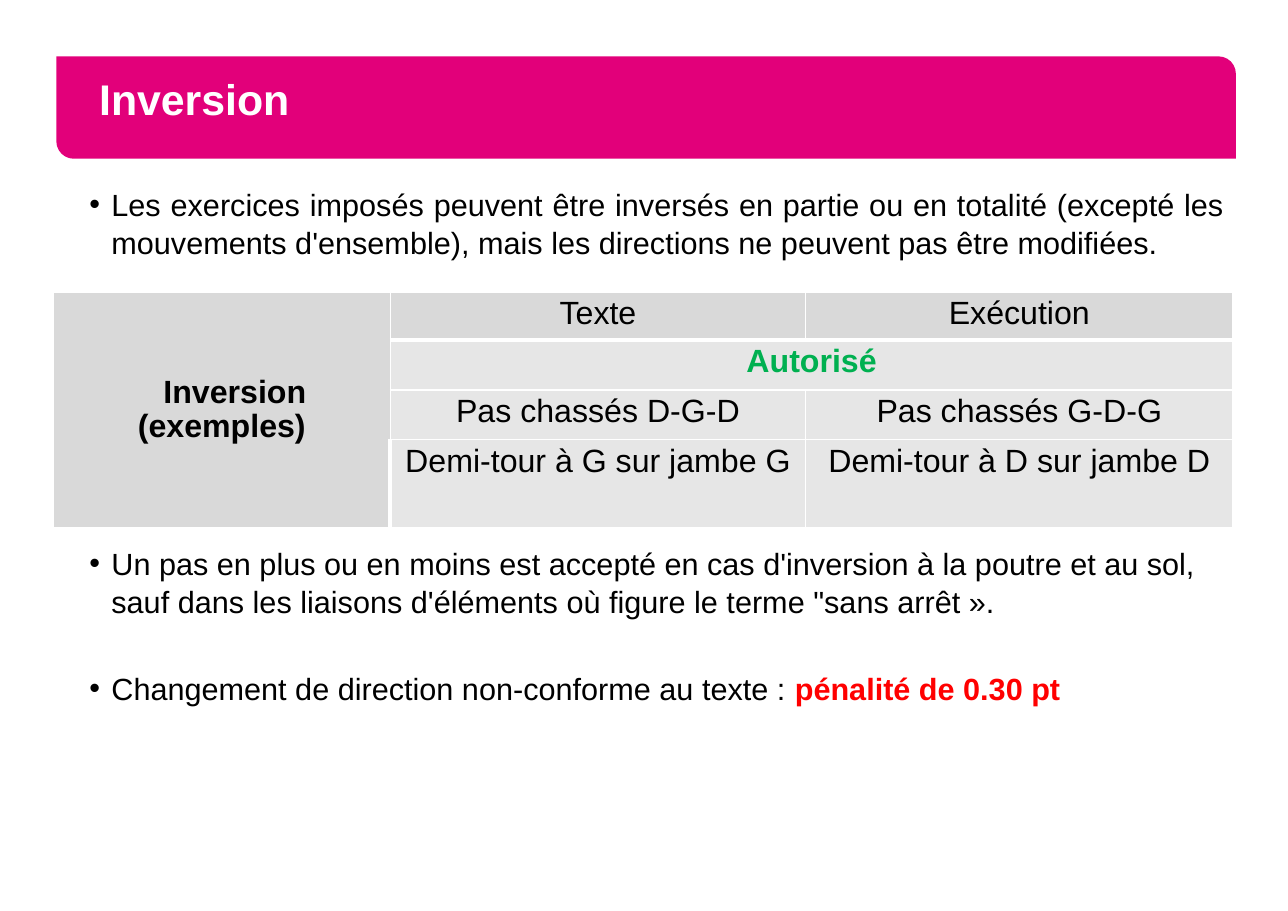
from lxml import etree
from pptx import Presentation
from pptx import util as u
from pptx.dml.color import RGBColor
from pptx.enum import shapes, text
from pptx.oxml.ns import qn

PINK, WHITE, BLACK = "E2007A", "FFFFFF", "000000"
HEADER_GREY, CELL_GREY = "D9D9D9", "E6E6E6"
GREEN, RED = "00B050", "FF0000"


def color(value):
    return RGBColor.from_string(value)


def apply(target, values):
    for name, value in values.items():
        setattr(target, name, value)


class SlideBuilder:
    font = "Arial"
    inset = u.Cm(0.13)

    def __init__(self, page):
        self.page = page

    def span(self, para, words, size, ink=BLACK, bold=False):
        span = para.add_run()
        span.text = words
        apply(span.font, {"name": self.font, "size": u.Pt(size), "bold": bold})
        span.font.color.rgb = color(ink)

    def margins(self, holder):
        apply(holder, {f"margin_{side}": self.inset
                       for side in ("left", "top", "right", "bottom")})

    def banner(self, left, top, width, height, words):
        box = self.page.shapes.add_shape(
            shapes.MSO_SHAPE.ROUND_2_DIAG_RECTANGLE,
            *map(u.Cm, (left, top, width, height)))
        box.shadow.inherit = False
        box.adjustments[0], box.adjustments[1] = 0, 0.17
        box.fill.solid()
        box.fill.fore_color.rgb = color(PINK)
        box.line.fill.background()
        frame = box.text_frame
        apply(frame, {"margin_left": u.Cm(0.87), "word_wrap": True,
                      "vertical_anchor": text.MSO_ANCHOR.MIDDLE})
        para = frame.paragraphs[0]
        apply(para, {"alignment": text.PP_ALIGN.LEFT, "line_spacing": u.Pt(22)})
        self.span(para, words, 28, WHITE, True)

    def bullets(self, left, top, width, height, items):
        box = self.page.shapes.add_textbox(*map(u.Cm, (left, top, width, height)))
        frame = box.text_frame
        frame.word_wrap = True
        self.margins(frame)
        for index, (gap, alignment, spans) in enumerate(items):
            para = frame.add_paragraph() if index else frame.paragraphs[0]
            props = para._p.get_or_add_pPr()
            props.set("marL", str(u.Cm(1.02)))
            props.set("indent", str(-u.Cm(0.51)))
            etree.SubElement(props, qn("a:buFont")).set("typeface", self.font)
            etree.SubElement(props, qn("a:buChar")).set("char", "•")
            apply(para, {"alignment": alignment, "line_spacing": 1.05,
                         "space_before": u.Pt(gap)})
            for words, ink, bold in spans:
                self.span(para, words, 20, ink, bold)

    def table(self, left, top, widths, heights):
        frame = self.page.shapes.add_table(
            len(heights), len(widths),
            *map(u.Cm, (left, top, sum(widths), sum(heights))))
        grid = frame.table
        for column, width in zip(grid.columns, widths):
            column.width = u.Cm(width)
        for row, height in zip(grid.rows, heights):
            row.height = u.Cm(height)
        return grid

    def cell(self, cell, lines, fill, thick="", ink=BLACK, bold=False, indents=(0,)):
        self.margins(cell)
        props = cell._tc.get_or_add_tcPr()
        for side in "LRTB":
            line = etree.SubElement(props, qn(f"a:ln{side}"))
            line.set("w", str(u.Pt(3 if side == thick else 1)))
            solid = etree.SubElement(line, qn("a:solidFill"))
            etree.SubElement(solid, qn("a:srgbClr")).set("val", WHITE)
        cell.fill.solid()
        cell.fill.fore_color.rgb = color(fill)
        for index, (words, indent) in enumerate(zip(lines, indents)):
            frame = cell.text_frame
            para = frame.add_paragraph() if index else frame.paragraphs[0]
            para._p.get_or_add_pPr().set("marL", str(u.Cm(indent)))
            apply(para, {"alignment": text.PP_ALIGN.CENTER, "line_spacing": 0.95})
            self.span(para, words, 21, ink, bold)


def main():
    deck = Presentation()
    apply(deck, {"slide_width": u.Cm(29.7), "slide_height": u.Cm(21)})
    builder = SlideBuilder(deck.slides.add_slide(deck.slide_layouts[6]))

    # Title banner
    builder.banner(1.3, 1.3, 27.2, 2.36, "Inversion")

    # Rules above and below the table
    justify, left = text.PP_ALIGN.JUSTIFY, text.PP_ALIGN.LEFT
    builder.bullets(1.42, 4.11, 26.95, 12.22, [
        (0, justify, [("Les exercices imposés peuvent être inversés en partie ou en "
                       "totalité (excepté les mouvements d'ensemble), mais les "
                       "directions ne peuvent pas être modifiées.", BLACK, False)]),
        (184, left, [("Un pas en plus ou en moins est accepté en cas d'inversion à la "
                      "poutre et au sol, sauf dans les liaisons d'éléments où figure "
                      "le terme \"sans arrêt ».", BLACK, False)]),
        (31.5, justify, [("Changement de direction non-conforme au texte : ", BLACK, False),
                         ("pénalité de 0.30 pt", RED, True)]),
    ])

    # Table of examples
    grid = builder.table(1.23, 6.73, (7.77, 9.58, 9.85), (1.11, 1.15, 1.15, 2.03))
    grid.cell(0, 0).merge(grid.cell(3, 0))
    grid.cell(1, 1).merge(grid.cell(1, 2))
    topic = grid.cell(0, 0)
    builder.cell(topic, ("Inversion", "(exemples)"), HEADER_GREY,
                 bold=True, indents=(0.6, 0))
    topic.vertical_anchor = text.MSO_ANCHOR.MIDDLE
    builder.cell(grid.cell(1, 1), ["Autorisé"], CELL_GREY, "T", GREEN, True)
    rows = {
        0: (("Texte", "Exécution"), HEADER_GREY, "BB"),
        2: (("Pas chassés D-G-D", "Pas chassés G-D-G"), CELL_GREY, "  "),
        3: (("Demi-tour à G sur jambe G", "Demi-tour à D sur jambe D"), CELL_GREY, "L "),
    }
    for row, (labels, fill, thick) in rows.items():
        for column, (label, side) in enumerate(zip(labels, thick), 1):
            builder.cell(grid.cell(row, column), [label], fill, side)

    deck.save("out.pptx")


if __name__ == "__main__":
    main()
